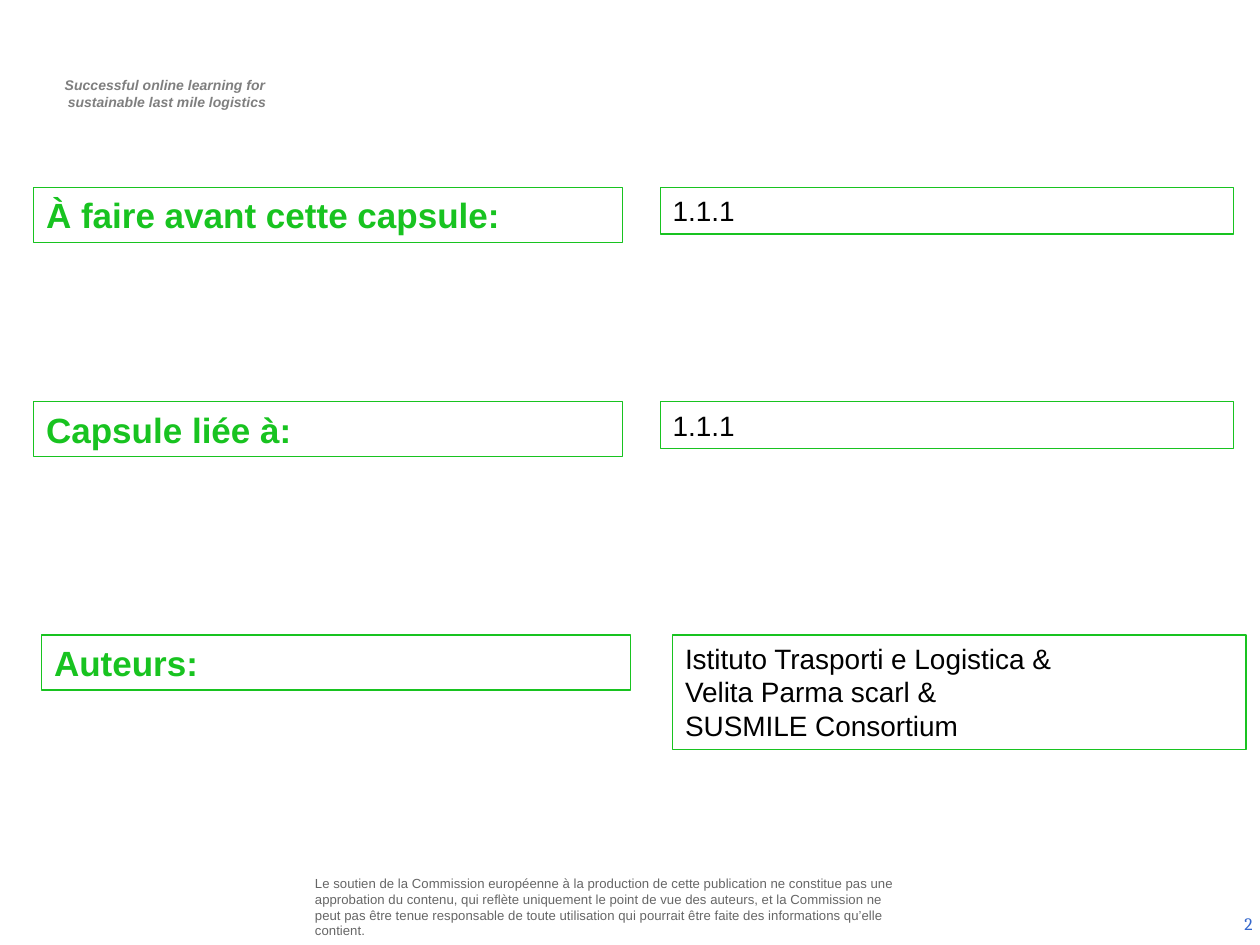
from dataclasses import dataclass

from pptx import Presentation
from pptx import util as u
from pptx.dml.color import RGBColor
from pptx.enum import shapes, text


@dataclass(frozen=True)
class Theme:
    """Colours, fonts and type sizes of the slide."""
    green: str = "18C320"
    white: str = "FFFFFF"
    black: str = "000000"
    header_grey: str = "7F7F7F"
    notice_grey: str = "666666"
    number_blue: str = "3366CC"
    body_font: str = "Arial"
    number_font: str = "Cambria"
    heading_size: float = 20
    value_size: float = 16
    number_size: float = 10
    header_size: float = 8
    notice_size: float = 7.5
    border: float = 0.75


class CapsuleSlide:
    """Draws the elements of a capsule slide in one style."""

    def __init__(self, slide, theme):
        self.slide = slide
        self.theme = theme

    def set_text(self, shape, content, size, color, font=None, bold=False, italic=False,
                 align=text.PP_ALIGN.LEFT, anchor=text.MSO_ANCHOR.TOP, inset=(0.25, 0.13), indent=0):
        """Fill a shape with formatted text."""
        frame = shape.text_frame
        frame.text = content
        frame.word_wrap = True
        frame.vertical_anchor = anchor
        frame.margin_left = frame.margin_right = u.Cm(inset[0])
        frame.margin_top = frame.margin_bottom = u.Cm(inset[1])
        for paragraph in frame.paragraphs:
            paragraph.alignment = align
            if indent:
                paragraph._p.get_or_add_pPr().set("marL", str(u.Cm(indent)))
            for run in paragraph.runs:
                run.font.name = font or self.theme.body_font
                run.font.size = u.Pt(size)
                run.font.bold = bold
                run.font.italic = italic
                run.font.color.rgb = RGBColor.from_string(color)

    def label(self, left, top, width, height, content, size, color, **style):
        """Add a plain text box."""
        shape = self.slide.shapes.add_textbox(*map(u.Cm, (left, top, width, height)))
        self.set_text(shape, content, size, color, **style)

    def box(self, left, top, width, height, content, size, color, **style):
        """Add a white box with a green border."""
        shape = self.slide.shapes.add_shape(
            shapes.MSO_SHAPE.RECTANGLE, *map(u.Cm, (left, top, width, height)))
        shape.shadow.inherit = False
        shape.fill.solid()
        shape.fill.fore_color.rgb = RGBColor.from_string(self.theme.white)
        shape.line.color.rgb = RGBColor.from_string(self.theme.green)
        shape.line.width = u.Pt(self.theme.border)
        self.set_text(shape, content, size, color, **style)

    def row(self, top, heading, value, heading_left=0.68, value_left=13.31, value_height=0.94):
        """Add a heading box and its value box side by side."""
        theme = self.theme
        self.box(heading_left, top, 11.87, 1.11, heading, theme.heading_size, theme.green, bold=True)
        self.box(value_left, top, 11.56, value_height, value, theme.value_size, theme.black)


def main():
    """Build and save the presentation."""
    presentation = Presentation()
    presentation.slide_width = u.Cm(25.4)
    presentation.slide_height = u.Cm(19.05)
    theme = Theme()
    capsule = CapsuleSlide(presentation.slides.add_slide(presentation.slide_layouts[6]), theme)

    capsule.label(0.74, 1.42, 5.16, 0.94,
                  "Successful online learning for \nsustainable last mile logistics",
                  theme.header_size, theme.header_grey, bold=True, italic=True,
                  align=text.PP_ALIGN.CENTER, indent=0.1)
    capsule.label(6.25, 17.65, 12.01, 1.27,
                  "Le soutien de la Commission européenne à la production de cette publication "
                  "ne constitue pas une approbation du contenu, qui reflète uniquement le point "
                  "de vue des auteurs, et la Commission ne peut pas être tenue responsable de "
                  "toute utilisation qui pourrait être faite des informations qu’elle contient.",
                  theme.notice_size, theme.notice_grey,
                  anchor=text.MSO_ANCHOR.MIDDLE, inset=(0.1, 0.1))
    capsule.label(19.58, 18.11, 5.92, 1.02, "2", theme.number_size, theme.number_blue,
                  font=theme.number_font, align=text.PP_ALIGN.RIGHT, anchor=text.MSO_ANCHOR.MIDDLE)

    capsule.row(3.78, "À faire avant cette capsule:", "1.1.1")
    capsule.row(8.1, "Capsule liée à:", "1.1.1")
    capsule.row(12.8, "Auteurs:",
                "Istituto Trasporti e Logistica &\nVelita Parma scarl &\nSUSMILE Consortium",
                heading_left=0.84, value_left=13.56, value_height=2.31)

    presentation.save("out.pptx")


if __name__ == "__main__":
    main()
